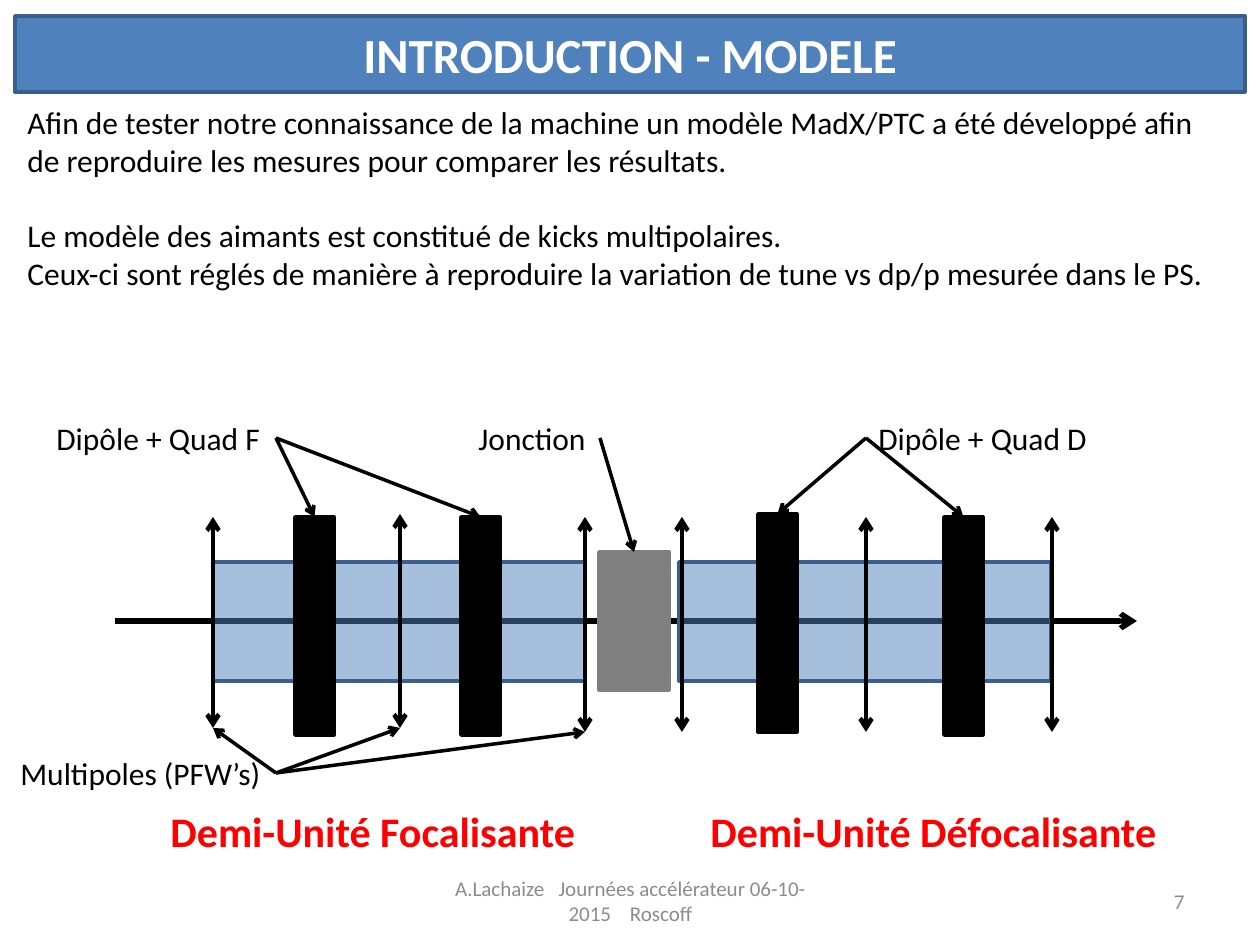
from lxml.etree import SubElement
from pptx import Presentation
from pptx.dml.color import RGBColor
from pptx.enum.shapes import MSO_CONNECTOR, MSO_SHAPE
from pptx.enum.text import MSO_ANCHOR, MSO_AUTO_SIZE, PP_ALIGN
from pptx.oxml.ns import qn
from pptx.util import Pt

PX = 914400 // 126
BLUE, EDGE, BLACK, GREY = "4F81BD", "3A5F8C", "000000", "808080"
WHITE, RED, FOOT = "FFFFFF", "FF0000", "8C8C8C"
AXIS_Y = 621
TOP, RIGHT, LEFT = 0, 3, 1


def rgb(color):
    return RGBColor.from_string(color)


def px(*lengths):
    return [n * PX for n in lengths]


def add_run(p, text, size, color, bold=False):
    r = p.add_run()
    r.text = text
    r.font.name = "Calibri"
    r.font.size = Pt(size)
    r.font.bold = bold
    r.font.color.rgb = rgb(color)


def add_box(s, box, fill, line, alpha=None):
    """Add a rectangle; alpha is the opacity in percent."""
    sp = s.shapes.add_shape(MSO_SHAPE.RECTANGLE, *px(*box))
    sp.shadow.inherit = False
    sp.fill.solid()
    sp.fill.fore_color.rgb = rgb(fill)
    sp.line.color.rgb = rgb(line)
    sp.line.width = Pt(2)
    if alpha is not None:
        clr = sp._element.spPr.find(qn("a:solidFill")).find(qn("a:srgbClr"))
        SubElement(clr, qn("a:alpha")).set("val", str(alpha * 1000))
    return sp


def add_text(s, box, text, size=18, color=BLACK, bold=False,
             align=PP_ALIGN.LEFT, anchor=MSO_ANCHOR.TOP, wrap=True):
    sp = s.shapes.add_textbox(*px(*box))
    tf = sp.text_frame
    tf.word_wrap = wrap
    tf.auto_size = MSO_AUTO_SIZE.NONE if wrap else MSO_AUTO_SIZE.SHAPE_TO_FIT_TEXT
    tf.vertical_anchor = anchor
    p = tf.paragraphs[0]
    p.alignment = align
    add_run(p, text, size, color, bold)
    return sp


def add_arrow(shapes, start, end, width):
    c = shapes.add_connector(MSO_CONNECTOR.STRAIGHT, *px(*start, *end))
    c.line.color.rgb = rgb(BLACK)
    c.line.width = Pt(width)
    SubElement(c.line._get_or_add_ln(), qn("a:tailEnd")).set("type", "arrow")
    SubElement(c._element.spPr, qn("a:effectLst"))
    return c


def add_multipole(s, x, top, bottom):
    """Add a pair of arrows that leave the beam axis upwards and downwards."""
    shapes = s.shapes.add_group_shape().shapes
    for y in (bottom, top):
        add_arrow(shapes, (x, AXIS_Y), (x, y), 2.5)


def add_pointer(s, label, side, target=None, end=(0, 0)):
    """Add an arrow from a label's side to the top of a target, or to a point."""
    c = add_arrow(s.shapes, end, end, 2)
    c.begin_connect(label, side)
    if target is not None:
        c.end_connect(target, TOP)


def add_header(s):
    title = add_box(s, (15, 16, 1230, 76), BLUE, EDGE)
    tf = title.text_frame
    tf.vertical_anchor = MSO_ANCHOR.MIDDLE
    tf.paragraphs[0].alignment = PP_ALIGN.CENTER
    add_run(tf.paragraphs[0], "INTRODUCTION - MODELE", 28, WHITE, True)

    body = add_text(s, (15, 97, 1230, 204),
                    "Afin de tester notre connaissance de la machine un modèle MadX/PTC a été "
                    "développé afin de reproduire les mesures pour comparer les résultats.")
    for text, gap in (
        ("Le modèle des aimants est constitué de kicks multipolaires.", 21.5),
        ("Ceux-ci sont réglés de manière à reproduire la variation de tune vs dp/p "
         "mesurée dans le PS.", 0),
    ):
        p = body.text_frame.add_paragraph()
        p.space_before = Pt(gap)
        add_run(p, text, 18, BLACK)


def add_footer(s):
    for box, text, align in (
        ((431, 876, 399, 50), "A.Lachaize   Journées accélérateur 06-10-2015    Roscoff",
         PP_ALIGN.CENTER),
        ((903, 876, 294, 50), "7", PP_ALIGN.RIGHT),
    ):
        add_text(s, box, text, 12, FOOT, align=align, anchor=MSO_ANCHOR.MIDDLE)


def add_lattice(s):
    """Draw the beam line with its magnets, multipoles, junction and labels."""
    add_arrow(s.shapes, (115, AXIS_Y), (1137, AXIS_Y), 3)
    for x in (213, 679):
        add_box(s, (x, 562, 372, 119), BLUE, EDGE, alpha=50)
    quads_f, quads_d = [
        [add_box(s, (x, y, 39, 218), BLACK, BLACK) for x, y in places]
        for places in (((295, 517), (461, 517)), ((758, 514), (944, 517)))
    ]
    multipoles = ((213, 517, 728), (400, 514, 728), (585, 517, 732),
                  (682, 517, 732), (866, 517, 732), (1052, 517, 732))
    for x, top, bottom in multipoles:
        add_multipole(s, x, top, bottom)
    junction = add_box(s, (599, 552, 70, 138), GREY, GREY)

    for box, text, side, targets in (
        ((44, 413, 232, 50), "Dipôle + Quad F", RIGHT, quads_f),
        ((866, 413, 237, 50), "Dipôle + Quad D", LEFT, quads_d),
        ((466, 413, 134, 50), "Jonction", RIGHT, [junction]),
    ):
        label = add_text(s, box, text, wrap=False)
        for target in targets:
            add_pointer(s, label, side, target)
    label = add_text(s, (8, 748, 268, 50), "Multipoles (PFW’s)", wrap=False)
    for x, _, bottom in multipoles[:3]:
        add_pointer(s, label, RIGHT, end=(x, bottom))

    for box, text in (((158, 799, 435, 63), "Demi-Unité Focalisante"),
                      ((698, 799, 476, 63), "Demi-Unité Défocalisante")):
        add_text(s, box, text, 24, RED, True, wrap=False)


def main():
    prs = Presentation()
    prs.slide_width, prs.slide_height = px(1260, 945)
    s = prs.slides.add_slide(prs.slide_layouts[6])
    add_header(s)
    add_footer(s)
    add_lattice(s)
    prs.save("out.pptx")


if __name__ == "__main__":
    main()
